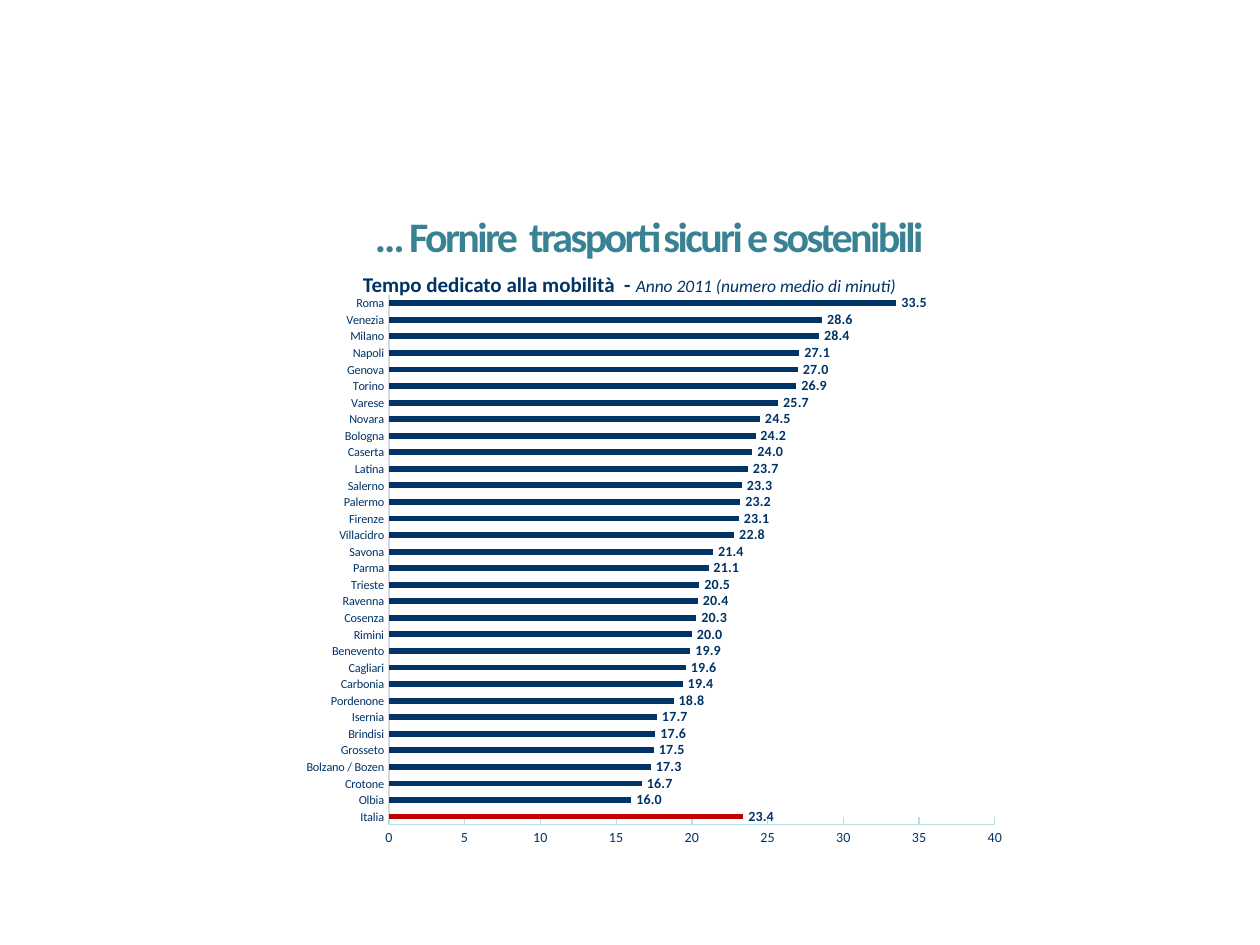
from lxml.etree import SubElement
from pptx import Presentation
from pptx.chart.data import CategoryChartData
from pptx.dml.color import RGBColor
from pptx.enum.chart import XL_CHART_TYPE as ChartType
from pptx.enum.chart import XL_LABEL_POSITION as LabelPosition
from pptx.enum.chart import XL_TICK_MARK as TickMark
from pptx.enum.text import MSO_ANCHOR as Anchor
from pptx.enum.text import PP_ALIGN as Align
from pptx.oxml import parse_xml
from pptx.oxml.ns import nsdecls, qn
from pptx.util import Pt

PX = 914400 / 126
COLORS = {
    "teal": "388294", "navy": "003366", "red": "C00000",
    "grey": "D9D9D9", "pale": "BBE0E3", "white": "FFFFFF",
}
MINUTES = {
    "Italia": 23.4, "Olbia": 16.0, "Crotone": 16.7, "Bolzano / Bozen": 17.3,
    "Grosseto": 17.5, "Brindisi": 17.6, "Isernia": 17.7, "Pordenone": 18.8,
    "Carbonia": 19.4, "Cagliari": 19.6, "Benevento": 19.9, "Rimini": 20.0,
    "Cosenza": 20.3, "Ravenna": 20.4, "Trieste": 20.5, "Parma": 21.1,
    "Savona": 21.4, "Villacidro": 22.8, "Firenze": 23.1, "Palermo": 23.2,
    "Salerno": 23.3, "Latina": 23.7, "Caserta": 24.0, "Bologna": 24.2,
    "Novara": 24.5, "Varese": 25.7, "Torino": 26.9, "Genova": 27.0,
    "Napoli": 27.1, "Milano": 28.4, "Venezia": 28.6, "Roma": 33.5,
}


def px(*lengths):
    return [round(length * PX) for length in lengths]


def rgb(name):
    return RGBColor.from_string(COLORS[name])


def apply(target, **values):
    for name, value in values.items():
        setattr(target, name, value)


class SlideBuilder:
    font_name = "Calibri"

    def __init__(self, page):
        self.page = page

    def style(self, font, color="navy", size=8, **values):
        apply(font, name=self.font_name, size=Pt(size), **values)
        font.color.rgb = rgb(color)

    def span(self, para, text, spacing=0, **values):
        span = para.add_run()
        span.text = text
        self.style(span.font, **values)
        if spacing:
            span.font._element.set("spc", str(spacing))

    def title(self, area, text, **values):
        frame = self.page.shapes.add_textbox(*px(*area)).text_frame
        frame.word_wrap = True
        para = frame.paragraphs[0]
        para.alignment = Align.CENTER
        self.span(para, text, **values)

    def caption(self, area, spans):
        table = self.page.shapes.add_table(1, 1, *px(*area)).table
        apply(table, first_row=False, horz_banding=False)
        cell = table.cell(0, 0)
        edge = px(1)[0]
        apply(cell, vertical_anchor=Anchor.BOTTOM, margin_left=edge,
              margin_right=edge, margin_top=edge, margin_bottom=0)
        cell.fill.solid()
        cell.fill.fore_color.rgb = rgb("white")
        for text, values in spans:
            self.span(cell.text_frame.paragraphs[0], text, **values)

    def axis(self, axis, line, size, tick):
        apply(axis, has_major_gridlines=False, major_tick_mark=tick,
              minor_tick_mark=TickMark.NONE)
        self.style(axis.tick_labels.font, size=size, bold=False)
        axis.format.line.width = Pt(0.75)
        axis.format.line.color.rgb = rgb(line)

    def bar_chart(self, area, plot_area, values, highlight):
        data = CategoryChartData(number_format="0.0")
        data.categories = list(values)
        data.add_series("Series 1", list(values.values()))
        chart = self.page.shapes.add_chart(
            ChartType.BAR_CLUSTERED, *px(*area), data).chart
        apply(chart, has_legend=False, has_title=False)
        apply(chart.font, name="Arial", size=Pt(10))

        # Axes
        self.axis(chart.category_axis, "grey", 7, TickMark.NONE)
        scale = chart.value_axis
        self.axis(scale, "pale", 8, TickMark.INSIDE)
        apply(scale, minimum_scale=0, maximum_scale=40, major_unit=5)
        apply(scale.tick_labels, number_format="#,##0",
              number_format_is_linked=False)

        # Bars and their labels
        plot = chart.plots[0]
        apply(plot, gap_width=182, vary_by_categories=False)
        series = plot.series[0]
        series.invert_if_negative = False
        point = series.points[list(values).index(highlight)]
        for bar, color in ((series, "navy"), (point, "red")):
            bar.format.fill.solid()
            bar.format.fill.fore_color.rgb = rgb(color)
        labels = series.data_labels
        apply(labels, show_value=True, number_format="0.0",
              number_format_is_linked=False,
              position=LabelPosition.OUTSIDE_END)
        self.style(labels.font, bold=True)

        # Transparent background and fixed inner plot area
        root = chart.element.find(qn("c:chart"))
        root.addnext(parse_xml(
            f'<c:spPr {nsdecls("c", "a")}><a:noFill/>'
            '<a:ln><a:noFill/></a:ln></c:spPr>'))
        plot_element = root.find(qn("c:plotArea"))
        for old in plot_element.findall(qn("c:layout")):
            plot_element.remove(old)
        layout = parse_xml(f'<c:layout {nsdecls("c")}/>')
        plot_element.insert(0, layout)
        manual = SubElement(layout, qn("c:manualLayout"))
        left, top, width, height = area
        x, y, w, h = plot_area
        settings = {
            "layoutTarget": "inner", "xMode": "edge", "yMode": "edge",
            "x": (x - left) / width, "y": (y - top) / height,
            "w": w / width, "h": h / height,
        }
        for name, value in settings.items():
            SubElement(manual, qn(f"c:{name}")).set("val", str(value))


def main():
    deck = Presentation()
    deck.slide_width, deck.slide_height = px(1260, 945)
    builder = SlideBuilder(deck.slides.add_slide(deck.slide_layouts[6]))

    # Heading
    builder.title((74, 204, 1150, 115),
                  "… Fornire  trasporti sicuri e sostenibili",
                  color="teal", size=24, bold=True, spacing=-150)

    # Chart caption
    builder.caption((362, 262, 546, 36), [
        ("Tempo dedicato alla mobilità  - ", {"size": 12, "bold": True}),
        ("Anno 2011 (numero medio di minuti)", {"size": 10, "italic": True}),
    ])

    # Minutes by city
    builder.bar_chart((292, 284, 725, 576), (389, 295, 606, 530),
                      MINUTES, "Italia")

    deck.save("out.pptx")


if __name__ == "__main__":
    main()
